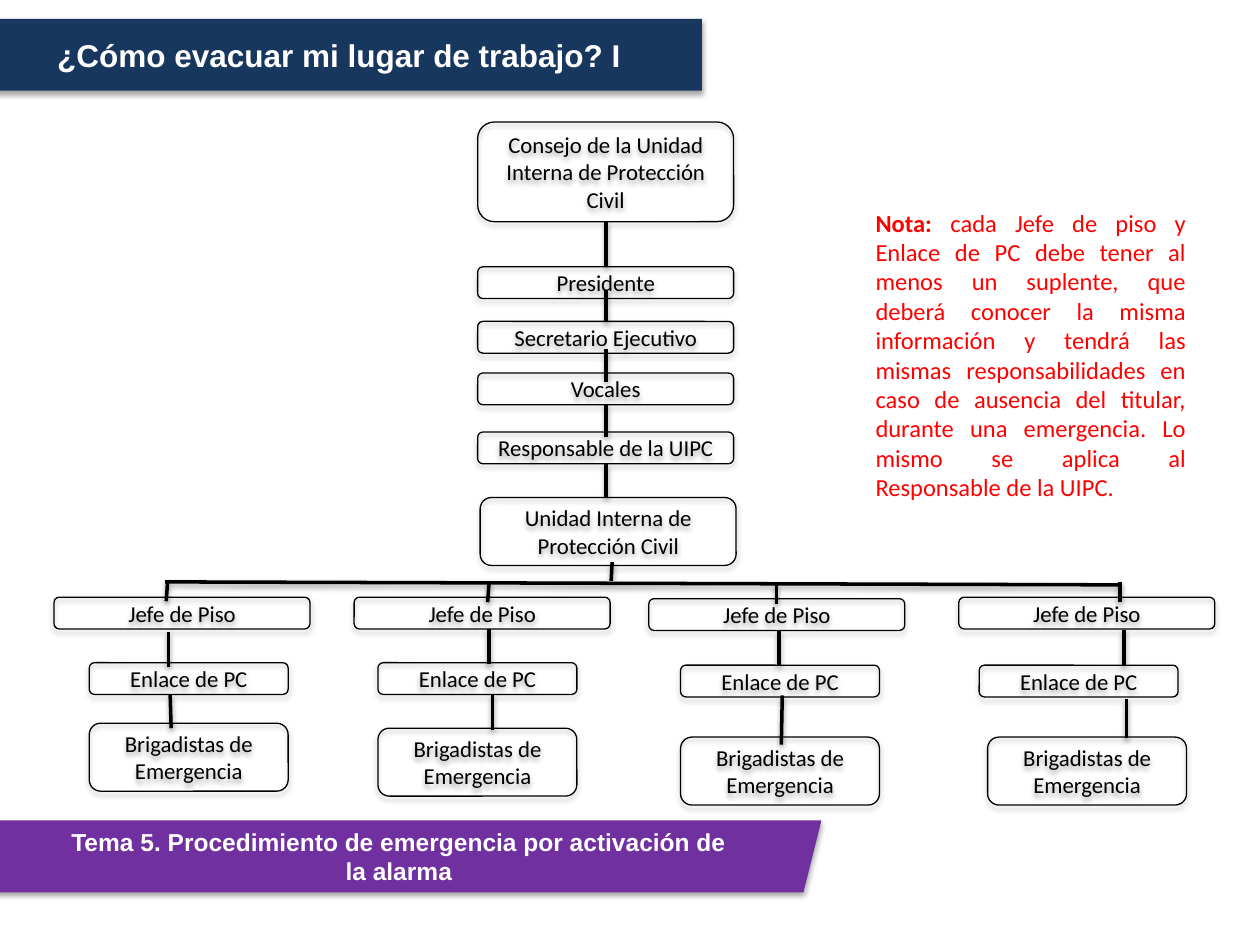
from dataclasses import dataclass

from lxml.etree import SubElement
from pptx import Presentation
from pptx.dml.color import RGBColor
from pptx.enum.shapes import MSO_CONNECTOR, MSO_SHAPE
from pptx.enum.text import MSO_ANCHOR, MSO_AUTO_SIZE, PP_ALIGN
from pptx.oxml.ns import qn
from pptx.util import Cm, Pt

NAVY = RGBColor(0x17, 0x37, 0x5E)
PURPLE = RGBColor(0x70, 0x30, 0xA0)
BLACK = RGBColor(0x00, 0x00, 0x00)
WHITE = RGBColor(0xFF, 0xFF, 0xFF)
RED = RGBColor(0xFF, 0x00, 0x00)

TITLE_FONT = dict(name="Arial", size=Pt(18), bold=True)
TOPIC_FONT = dict(name="Arial", size=Pt(14), bold=True)
BOX_FONT = dict(name="Calibri", size=Pt(13), bold=False)
NOTE_FONT = dict(name="Calibri", size=Pt(14), bold=False)

WIDE, NARROW = 5.16, 4.01
ONE_LINE, TWO_LINES, THREE_LINES = 0.64, 1.37, 2.01
COUNCIL_LEFT, COUNCIL_AXIS = 9.63, 12.22


@dataclass(frozen=True)
class Box:
    """An organisation chart box, in centimetres."""
    text: str
    left: float
    top: float
    width: float
    height: float


@dataclass(frozen=True)
class Link:
    """A straight link between boxes, in centimetres."""
    x1: float
    y1: float
    x2: float
    y2: float


@dataclass(frozen=True)
class Brigade:
    """One branch: (left, top) of its three boxes and the links above them."""
    chief: tuple[float, float]
    liaison: tuple[float, float]
    members: tuple[float, float]
    links: tuple[Link, Link, Link]


COUNCIL = [
    Box("Consejo de la Unidad Interna de Protección Civil",
        COUNCIL_LEFT, 2.46, WIDE, THREE_LINES),
    *(Box(text, COUNCIL_LEFT, top, WIDE, ONE_LINE) for text, top in (
        ("Presidente", 5.38), ("Secretario Ejecutivo", 6.48),
        ("Vocales", 7.52), ("Responsable de la UIPC", 8.71))),
    Box("Unidad Interna de Protección Civil", 9.68, 10.03, WIDE, TWO_LINES),
]
COUNCIL_LINKS = [
    Link(COUNCIL_AXIS, start, COUNCIL_AXIS, end) for start, end in (
        (4.47, 5.38), (5.84, 6.48), (7.04, 7.70), (8.15, 8.81), (9.35, 10.03))
]
TRUNK_LINKS = [Link(12.34, 11.33, 12.32, 11.71), Link(22.56, 11.79, 3.33, 11.73)]

BRIGADES = [
    Brigade((1.09, 12.04), (1.80, 13.36), (1.80, 14.58),
            (Link(3.38, 11.71, 3.35, 12.12), Link(3.40, 12.75, 3.40, 13.44),
             Link(3.43, 14.00, 3.45, 14.68))),
    Brigade((7.14, 12.04), (7.62, 13.36), (7.62, 14.68),
            (Link(9.86, 11.73, 9.83, 12.14), Link(9.86, 12.67, 9.86, 13.39),
             Link(9.93, 14.00, 9.93, 14.71))),
    Brigade((13.08, 12.07), (13.72, 13.41), (13.72, 14.86),
            (Link(15.65, 11.79, 15.65, 12.17), Link(15.70, 12.73, 15.70, 13.41),
             Link(15.77, 14.02, 15.75, 15.01))),
    Brigade((19.33, 12.04), (19.74, 13.41), (19.91, 14.86),
            (Link(22.58, 11.73, 22.58, 12.14), Link(22.66, 12.70, 22.66, 13.41),
             Link(22.71, 14.10, 22.71, 14.88))),
]


def apply_font(font, formats: dict, color: RGBColor) -> None:
    for attribute, value in formats.items():
        setattr(font, attribute, value)
    font.color.rgb = color


def add_shadow(shape, opacity: int, distance: float) -> None:
    """Soft black shadow falling straight down."""
    properties = shape._element.spPr
    for old in properties.findall(qn("a:effectLst")):
        properties.remove(old)
    effects = SubElement(properties, qn("a:effectLst"))
    shadow = SubElement(effects, qn("a:outerShdw"), blurRad=str(Pt(3.1)),
                        dist=str(Pt(distance)), dir="5400000", rotWithShape="0")
    color = SubElement(shadow, qn("a:srgbClr"), val=str(BLACK))
    SubElement(color, qn("a:alpha"), val=str(opacity * 1000))


def set_text(shape, text: str, formats: dict, color: RGBColor) -> None:
    frame = shape.text_frame
    frame.word_wrap = True
    frame.auto_size = MSO_AUTO_SIZE.NONE
    frame.vertical_anchor = MSO_ANCHOR.MIDDLE
    paragraph = frame.paragraphs[0]
    paragraph.alignment = PP_ALIGN.CENTER
    run = paragraph.add_run()
    run.text = text
    apply_font(run.font, formats, color)


def format_banner(shape, text: str, fill: RGBColor, formats: dict) -> None:
    shape.fill.solid()
    shape.fill.fore_color.rgb = fill
    shape.line.fill.background()
    set_text(shape, text, formats, WHITE)
    add_shadow(shape, 35, 1.8)


def add_box(slide, box: Box) -> None:
    shape = slide.shapes.add_shape(
        MSO_SHAPE.ROUNDED_RECTANGLE,
        Cm(box.left), Cm(box.top), Cm(box.width), Cm(box.height))
    shape.fill.background()
    shape.line.color.rgb = BLACK
    shape.line.width = Pt(0.75)
    set_text(shape, box.text, BOX_FONT, BLACK)
    add_shadow(shape, 35, 1.8)


def add_link(slide, link: Link) -> None:
    connector = slide.shapes.add_connector(
        MSO_CONNECTOR.STRAIGHT,
        Cm(link.x1), Cm(link.y1), Cm(link.x2), Cm(link.y2))
    connector.line.color.rgb = BLACK
    connector.line.width = Pt(2)
    add_shadow(connector, 38, 1.6)


def add_brigade(slide, brigade: Brigade) -> None:
    add_box(slide, Box("Jefe de Piso", *brigade.chief, WIDE, ONE_LINE))
    add_box(slide, Box("Enlace de PC", *brigade.liaison, NARROW, ONE_LINE))
    add_box(slide, Box("Brigadistas de Emergencia", *brigade.members,
                       NARROW, TWO_LINES))
    for link in brigade.links:
        add_link(slide, link)


def add_note(slide) -> None:
    frame = slide.shapes.add_textbox(
        Cm(17.4), Cm(4.06), Cm(6.76), Cm(6.25)).text_frame
    frame.word_wrap = True
    frame.auto_size = MSO_AUTO_SIZE.SHAPE_TO_FIT_TEXT
    paragraph = frame.paragraphs[0]
    paragraph.alignment = PP_ALIGN.JUSTIFY
    for text, bold in (
            ("Nota: ", True),
            ("cada Jefe de piso y Enlace de PC debe tener al menos un suplente, "
             "que deberá conocer la misma información y tendrá las mismas "
             "responsabilidades en caso de ausencia del titular, durante una "
             "emergencia. Lo mismo se aplica al Responsable de la UIPC.", False)):
        run = paragraph.add_run()
        run.text = text
        apply_font(run.font, NOTE_FONT | {"bold": bold}, RED)


def main() -> None:
    presentation = Presentation()
    presentation.slide_width, presentation.slide_height = Cm(25.4), Cm(19.05)
    slide = presentation.slides.add_slide(presentation.slide_layouts[5])

    # Title and topic banners
    title = slide.shapes.title
    title.left, title.top, title.width, title.height = (
        Cm(-0.48), Cm(0.38), Cm(14.63), Cm(1.45))
    geometry = SubElement(title._element.spPr, qn("a:prstGeom"),
                          prst="parallelogram")
    SubElement(geometry, qn("a:avLst"))
    format_banner(title, "¿Cómo evacuar mi lugar de trabajo? I", NAVY, TITLE_FONT)
    topic = slide.shapes.add_shape(
        MSO_SHAPE.PARALLELOGRAM, Cm(-0.48), Cm(16.54), Cm(17.04), Cm(1.45))
    format_banner(
        topic, "Tema 5. Procedimiento de emergencia por activación de la alarma",
        PURPLE, TOPIC_FONT)

    # Council column, trunk and brigades
    for box in COUNCIL:
        add_box(slide, box)
    for link in COUNCIL_LINKS + TRUNK_LINKS:
        add_link(slide, link)
    for brigade in BRIGADES:
        add_brigade(slide, brigade)

    add_note(slide)
    presentation.save("out.pptx")


if __name__ == "__main__":
    main()
